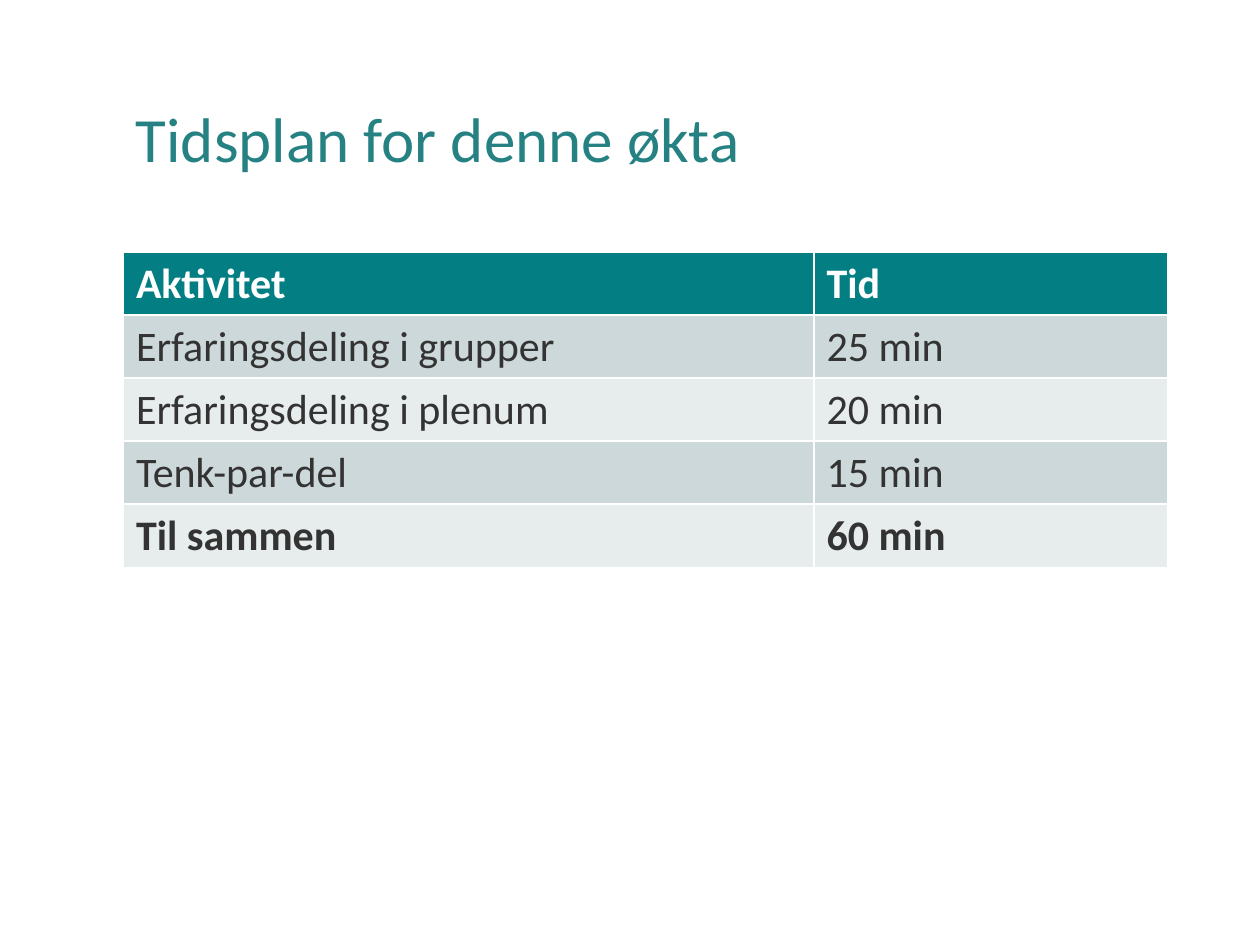
"""Build the session timetable slide."""
from dataclasses import dataclass

from pptx import Presentation
from pptx.dml.color import RGBColor
from pptx.enum.text import MSO_ANCHOR
from pptx.slide import Slide
from pptx.text.text import TextFrame
from pptx.util import Inches, Pt

COLORS = {
    "title": "268183",
    "header": "037F83",
    "band_dark": "CCD8D9",
    "band_light": "E7ECED",
    "body": "333333",
    "white": "FFFFFF",
}
LEFT, WIDTH = 0.98, 8.29
COLUMN_WIDTHS = (5.48, 2.81)
ROW_HEIGHT = 0.5


@dataclass(frozen=True)
class Activity:
    name: str
    time: str
    fill: str
    color: str = "body"
    bold: bool = False


SCHEDULE = [
    Activity("Aktivitet", "Tid", "header", "white", True),
    Activity("Erfaringsdeling i grupper", "25 min", "band_dark"),
    Activity("Erfaringsdeling i plenum", "20 min", "band_light"),
    Activity("Tenk-par-del", "15 min", "band_dark"),
    Activity("Til sammen", "60 min", "band_light", bold=True),
]


def write(frame: TextFrame, text: str, *, size: float, color: str,
          bold: bool = False, line_spacing: float = 1.0) -> None:
    paragraph = frame.paragraphs[0]
    paragraph.line_spacing = line_spacing
    run = paragraph.add_run()
    run.text = text
    run.font.name = "Calibri"
    run.font.size = Pt(size)
    run.font.bold = bold
    run.font.color.rgb = RGBColor.from_string(COLORS[color])


def draw_title(slide: Slide, text: str) -> None:
    title = slide.shapes.add_textbox(
        Inches(LEFT), Inches(0.4), Inches(WIDTH), Inches(1.45)).text_frame
    title.word_wrap = True
    title.vertical_anchor = MSO_ANCHOR.MIDDLE
    write(title, text, size=36, color="title", line_spacing=0.9)


def draw_schedule(slide: Slide, activities: list[Activity]) -> None:
    schedule = slide.shapes.add_table(
        len(activities), len(COLUMN_WIDTHS), Inches(LEFT), Inches(2),
        Inches(WIDTH), Inches(ROW_HEIGHT * len(activities))).table
    for column, width in zip(schedule.columns, COLUMN_WIDTHS):
        column.width = Inches(width)
    for row, activity in zip(schedule.rows, activities):
        for cell, text in zip(row.cells, (activity.name, activity.time)):
            cell.fill.solid()
            cell.fill.fore_color.rgb = RGBColor.from_string(COLORS[activity.fill])
            write(cell.text_frame, text, size=24, color=activity.color,
                  bold=activity.bold)


def main() -> None:
    presentation = Presentation()
    presentation.slide_width = Inches(10)
    presentation.slide_height = Inches(7.5)
    slide = presentation.slides.add_slide(presentation.slide_layouts[6])
    draw_title(slide, "Tidsplan for denne økta")
    draw_schedule(slide, SCHEDULE)
    presentation.save("out.pptx")


if __name__ == "__main__":
    main()
